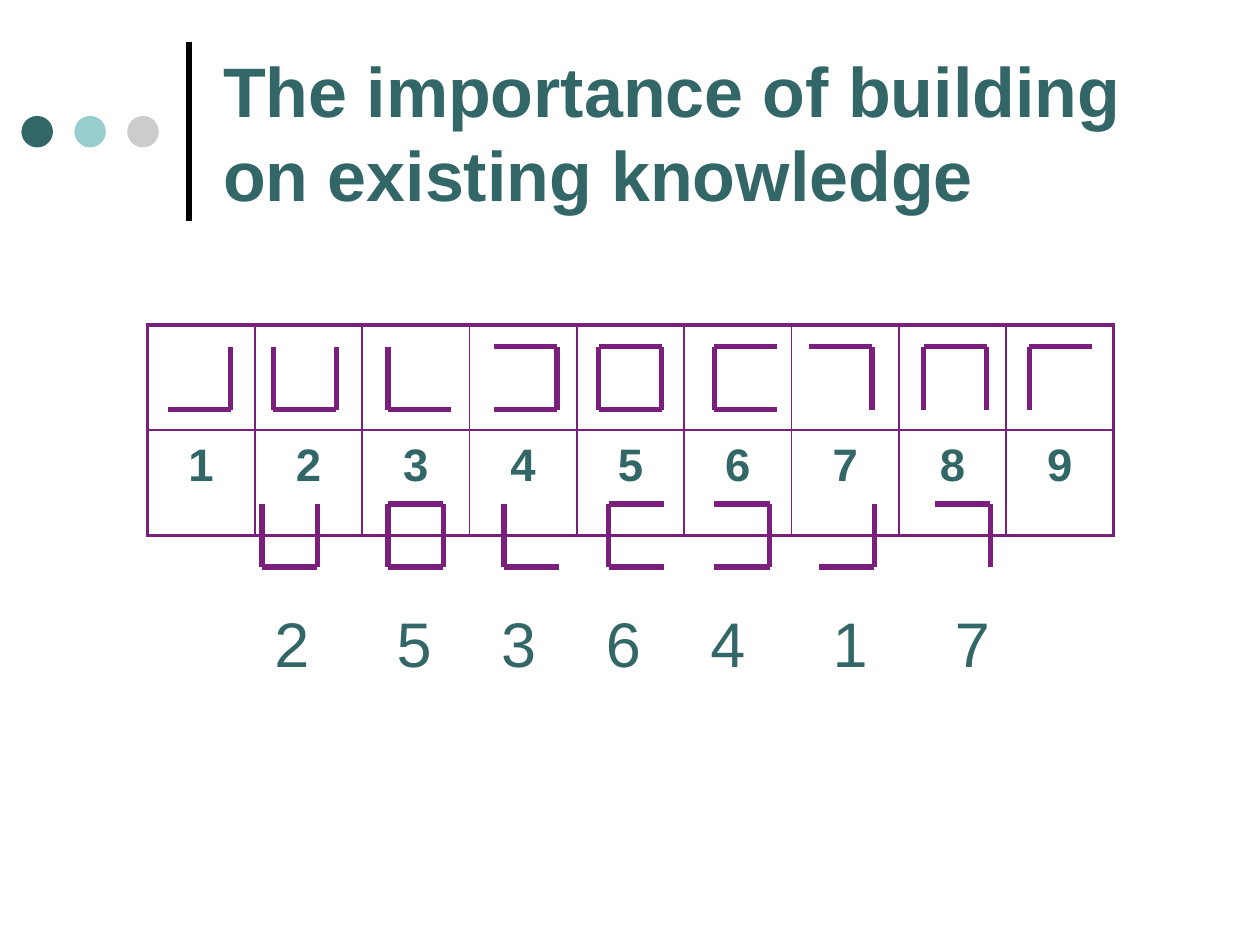
from itertools import accumulate

from lxml.etree import SubElement
from pptx import Presentation
from pptx.dml.color import RGBColor
from pptx.enum.shapes import MSO_CONNECTOR, MSO_SHAPE
from pptx.enum.text import MSO_ANCHOR, MSO_AUTO_SIZE, PP_ALIGN
from pptx.oxml.ns import qn
from pptx.util import Inches, Pt

COLORS = {
    "teal": "336666",
    "aqua": "99CCCC",
    "gray": "CCCCCC",
    "black": "000000",
    "purple": "7B1F7D",
}
SYMBOL_SIDES = {
    1: "BR", 2: "LBR", 3: "LB",
    4: "TRB", 5: "LTRB", 6: "LTB",
    7: "TR", 8: "LTR", 9: "LT",
}
KEY_LEFTS = [1.33, 2.17, 3.08, 3.92, 4.75, 5.67, 6.42, 7.33, 8.17]
CODE = [2, 5, 3, 6, 4, 1, 7]
CODE_LEFTS = [2.08, 3.08, 4, 4.83, 5.67, 6.5, 7.42]
ANSWER_STEPS = [0.97, 0.83, 0.83, 0.83, 0.97, 0.97]


def rgb(name):
    return RGBColor.from_string(COLORS[name])


def style_runs(p, size, bold=False):
    for r in p.runs:
        r.font.name = "Arial"
        r.font.size = Pt(size)
        r.font.bold = bold
        r.font.color.rgb = rgb("teal")


def add_line(s, x1, y1, x2, y2, color):
    line = s.shapes.add_connector(
        MSO_CONNECTOR.STRAIGHT, Inches(x1), Inches(y1), Inches(x2), Inches(y2))
    line.line.color.rgb = rgb(color)
    line.line.width = Pt(3)
    SubElement(line._element.spPr, qn("a:effectLst"))


def add_dot(s, left, color):
    dot = s.shapes.add_shape(
        MSO_SHAPE.OVAL, Inches(left), Inches(0.92), Inches(0.25), Inches(0.25))
    dot.shadow.inherit = False
    dot.fill.solid()
    dot.fill.fore_color.rgb = rgb(color)
    dot.line.fill.background()


def add_title(s, text):
    title = s.shapes.title
    title.left, title.top = Inches(1.67), Inches(0.21)
    title.width, title.height = Inches(7.67), Inches(1.67)
    tf = title.text_frame
    tf.text = text
    tf.word_wrap = True
    tf.auto_size = MSO_AUTO_SIZE.NONE
    tf.vertical_anchor = MSO_ANCHOR.MIDDLE
    p = tf.paragraphs[0]
    p.alignment = PP_ALIGN.LEFT
    style_runs(p, 40, bold=True)


def add_symbol(s, digit, left, top, width, height=0.5):
    right, bottom = left + width, top + height
    sides = {
        "L": (left, top, left, bottom),
        "T": (left, top, right, top),
        "R": (right, top, right, bottom),
        "B": (left, bottom, right, bottom),
    }
    for side in SYMBOL_SIDES[digit]:
        add_line(s, *sides[side], "purple")


def set_borders(cell, widths):
    tcPr = cell._tc.get_or_add_tcPr()
    for side, width in zip("LRTB", widths):
        ln = SubElement(tcPr, qn(f"a:ln{side}"), w=str(Pt(width)))
        fill = SubElement(ln, qn("a:solidFill"))
        SubElement(fill, qn("a:srgbClr"), val=COLORS["purple"])


def add_key_table(s):
    columns = len(SYMBOL_SIDES)
    table = s.shapes.add_table(
        2, columns, Inches(1.17), Inches(2.58), Inches(7.67), Inches(1.67)).table
    table.first_row = table.horz_banding = False
    for row in range(2):
        for col in range(columns):
            cell = table.cell(row, col)
            edges = (col == 0, col == columns - 1, row == 0, row == 1)
            set_borders(cell, [2.25 if edge else 1 for edge in edges])
            cell.fill.background()
    for col, digit in enumerate(SYMBOL_SIDES):
        cell = table.cell(1, col)
        cell.margin_top = Inches(0.08)
        cell.text = str(digit)
        p = cell.text_frame.paragraphs[0]
        p.alignment = PP_ALIGN.CENTER
        style_runs(p, 26, bold=True)


def add_answer(s):
    box = s.shapes.add_textbox(Inches(2.08), Inches(4.75), Inches(6.5), Inches(0.7))
    tf = box.text_frame
    tf.word_wrap = True
    tf.text = "\t".join(map(str, CODE))
    p = tf.paragraphs[0]
    tabs = SubElement(p._p.get_or_add_pPr(), qn("a:tabLst"))
    for position in accumulate(ANSWER_STEPS):
        SubElement(tabs, qn("a:tab"), pos=str(Inches(position)), algn="l")
    style_runs(p, 36)


def main():
    prs = Presentation()
    prs.slide_width, prs.slide_height = Inches(10), Inches(7.5)
    s = prs.slides.add_slide(prs.slide_layouts[5])
    add_line(s, 1.5, 0.33, 1.5, 1.75, "black")
    for i, color in enumerate(["teal", "aqua", "gray"]):
        add_dot(s, 0.17 + 0.42 * i, color)
    add_title(s, "The importance of building on existing knowledge")
    add_key_table(s)
    for digit, left in zip(SYMBOL_SIDES, KEY_LEFTS):
        add_symbol(s, digit, left, 2.75, 0.5)
    add_answer(s)
    for digit, left in zip(CODE, CODE_LEFTS):
        add_symbol(s, digit, left, 4, 0.44)
    prs.save("out.pptx")


if __name__ == "__main__":
    main()
